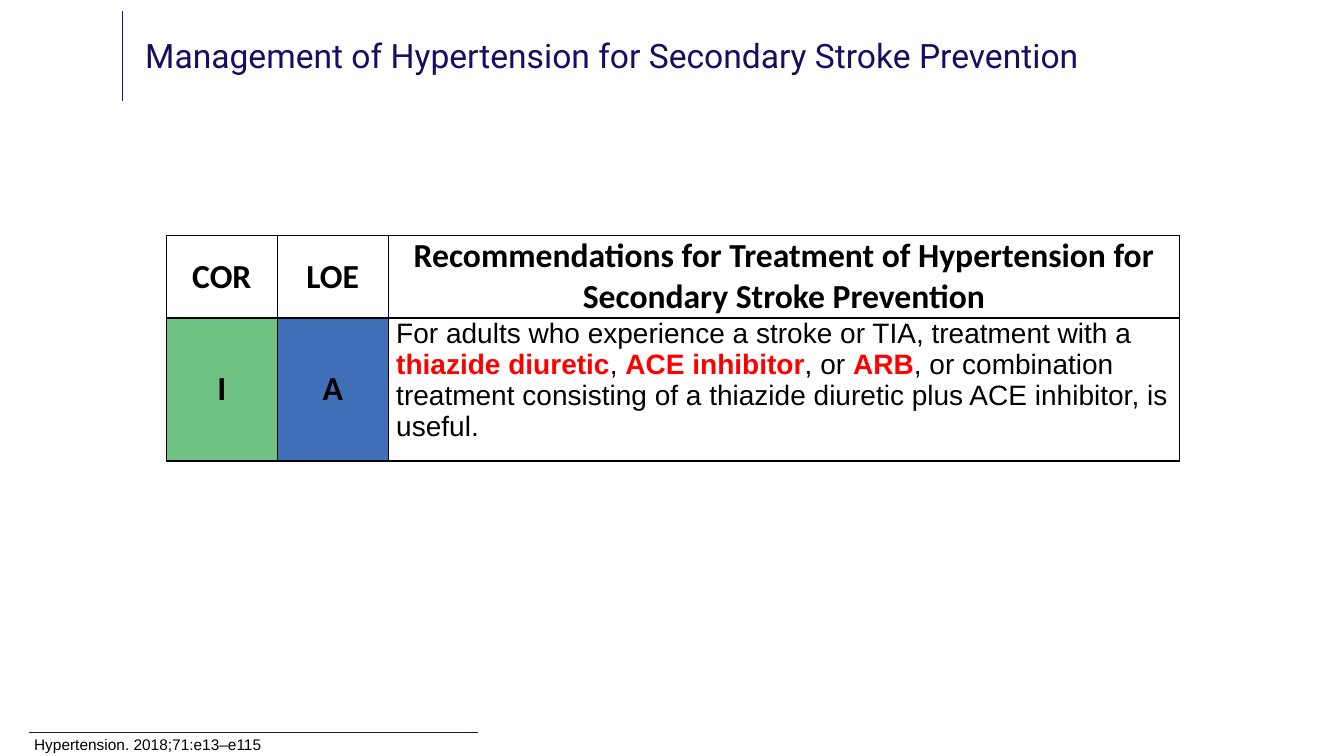
"""Build the slide on hypertension management for secondary stroke prevention."""
from dataclasses import dataclass

from lxml import etree
from pptx import Presentation
from pptx import util as u
from pptx.dml.color import RGBColor
from pptx.enum import shapes, text
from pptx.oxml import ns


@dataclass(frozen=True)
class Theme:
    navy: str = "160E63"
    rule: str = "1B1464"
    black: str = "000000"
    white: str = "FFFFFF"
    green: str = "6FC284"
    blue: str = "3E6FB7"
    red: str = "FF0000"
    title_font: str = "Roboto"
    head_font: str = "Calibri"
    body_font: str = "Arial"
    head_size: float = 24
    body_size: float = 20
    note_size: float = 11


@dataclass(frozen=True)
class Rule:
    x1: float
    y1: float
    x2: float
    y2: float


@dataclass(frozen=True)
class Cell:
    words: str
    fill: str = Theme.white


T = Theme()
RULES = [Rule(1.21, 0.11, 1.21, 1), Rule(0.29, 7.27, 4.74, 7.27)]
COLS = [1.1, 1.1, 7.85]
ROWS = [0.81, 1.42]
LABELS = [
    [Cell("COR"), Cell("LOE"),
     Cell("Recommendations for Treatment of Hypertension for Secondary Stroke Prevention")],
    [Cell("I", T.green), Cell("A", T.blue)],
]
ADVICE = [
    ("For adults who experience a stroke or TIA, treatment with a ", False),
    ("thiazide diuretic", True),
    (", ", False),
    ("ACE inhibitor", True),
    (", or ", False),
    ("ARB", True),
    (", or combination treatment consisting of a thiazide diuretic plus ACE inhibitor, is useful.",
     False),
]


def add_text(p, words: str, *, size: float, font: str, color: str = T.black,
             bold: bool = False, align=text.PP_ALIGN.LEFT, spacing: float = 1.0) -> None:
    """Add one formatted run to a paragraph."""
    p.alignment = align
    p.line_spacing = spacing
    r = p.add_run()
    r.text = words
    r.font.size = u.Pt(size)
    r.font.name = font
    r.font.bold = bold
    r.font.color.rgb = RGBColor.from_string(color)


def place(sp, x: float, y: float, w: float, h: float):
    """Position a text shape, centre it vertically and return its first paragraph."""
    sp.left, sp.top, sp.width, sp.height = map(u.Inches, (x, y, w, h))
    tf = sp.text_frame
    tf.word_wrap = True
    tf.auto_size = text.MSO_AUTO_SIZE.NONE
    tf.vertical_anchor = text.MSO_ANCHOR.MIDDLE
    return tf.paragraphs[0]


def add_rule(s, rule: Rule) -> None:
    """Draw a thin straight line without a shadow."""
    ends = map(u.Inches, (rule.x1, rule.y1, rule.x2, rule.y2))
    cx = s.shapes.add_connector(shapes.MSO_CONNECTOR.STRAIGHT, *ends)
    cx.line.color.rgb = RGBColor.from_string(T.rule)
    cx.line.width = u.Pt(0.5)
    etree.SubElement(cx._element.spPr, ns.qn("a:effectLst"))


def format_cell(cell, fill: str, anchor):
    """Set fill, margins and borders of a cell and return its first paragraph."""
    cell.fill.solid()
    cell.fill.fore_color.rgb = RGBColor.from_string(fill)
    cell.margin_left = cell.margin_right = u.Inches(0.08)
    cell.margin_top = cell.margin_bottom = 0
    cell.vertical_anchor = anchor
    tc_pr = cell._tc.get_or_add_tcPr()
    for i, side in enumerate(("lnL", "lnR", "lnT", "lnB")):
        ln = etree.Element(ns.qn(f"a:{side}"), w=str(u.Pt(1)))
        solid = etree.SubElement(ln, ns.qn("a:solidFill"))
        etree.SubElement(solid, ns.qn("a:srgbClr"), val=T.black)
        tc_pr.insert(i, ln)
    return cell.text_frame.paragraphs[0]


def add_recommendations(s) -> None:
    """Add the table with class, level of evidence and recommendation."""
    box = map(u.Inches, (1.65, 2.34, sum(COLS), sum(ROWS)))
    tbl = s.shapes.add_table(len(ROWS), len(COLS), *box).table
    for col, width in zip(tbl.columns, COLS):
        col.width = u.Inches(width)
    for row, height in zip(tbl.rows, ROWS):
        row.height = u.Inches(height)
    for i, labels in enumerate(LABELS):
        for j, label in enumerate(labels):
            p = format_cell(tbl.cell(i, j), label.fill, text.MSO_ANCHOR.MIDDLE)
            add_text(p, label.words, size=T.head_size, font=T.head_font, bold=True,
                     align=text.PP_ALIGN.CENTER)
    p = format_cell(tbl.cell(1, 2), T.white, text.MSO_ANCHOR.TOP)
    for words, key in ADVICE:
        add_text(p, words, size=T.body_size, font=T.body_font, bold=key,
                 color=T.red if key else T.black)


def main() -> None:
    """Build and save the slide."""
    prs = Presentation()
    prs.slide_width, prs.slide_height = u.Inches(13.33), u.Inches(7.5)
    s = prs.slides.add_slide(prs.slide_layouts[5])
    for rule in RULES:
        add_rule(s, rule)
    add_text(place(s.shapes.title, 1.34, 0.05, 11.28, 1.05),
             "Management of Hypertension for Secondary Stroke Prevention",
             size=T.head_size, font=T.title_font, color=T.navy, spacing=0.9)
    note = s.shapes.add_textbox(0, 0, 0, 0)
    add_text(place(note, 0.24, 7.3, 8.33, 0.2), "Hypertension. 2018;71:e13–e115",
             size=T.note_size, font=T.body_font, spacing=0.9)
    add_recommendations(s)
    prs.save("out.pptx")


if __name__ == "__main__":
    main()
